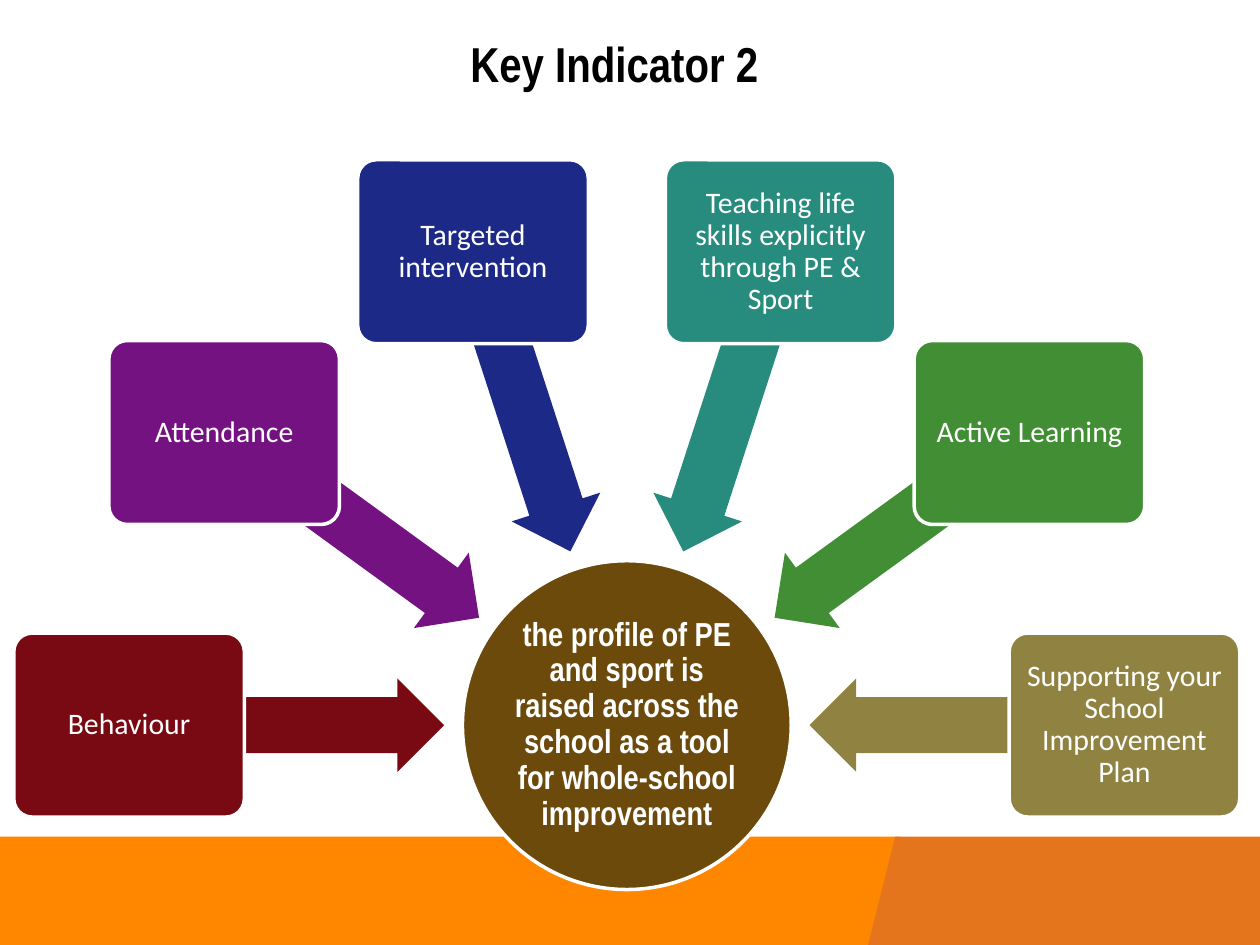
from math import cos, radians, sin

from pptx import Presentation
from pptx.dml.color import RGBColor
from pptx.enum.shapes import MSO_SHAPE
from pptx.enum.text import MSO_ANCHOR, PP_ALIGN
from pptx.util import Inches, Pt

BAND = MSO_SHAPE.PARALLELOGRAM
OVAL = MSO_SHAPE.OVAL
CARD = MSO_SHAPE.ROUNDED_RECTANGLE
ARROW = MSO_SHAPE.LEFT_ARROW
MIDDLE = MSO_ANCHOR.MIDDLE
CENTER = PP_ALIGN.CENTER

# Content
TITLE = "Key Indicator 2"
GOAL = ("the profile of PE and sport is raised across the school "
        "as a tool for whole-school improvement")
FACTORS = [
    ("Behaviour", "790A14"),
    ("Attendance", "751281"),
    ("Targeted intervention", "1C2987"),
    ("Teaching life skills explicitly through PE & Sport", "278B7E"),
    ("Active Learning", "418E34"),
    ("Supporting your School Improvement Plan", "908342"),
]
BANDS = [(-0.25, 7.39, "FF8700"), (6.88, 3.39, "E4751D")]


class Theme:
    head = ("Arial Narrow", 28, True, "000000")
    hub = ("Arial Narrow", 19, True, "FFFFFF")
    card = ("Calibri", 17, False, "FFFFFF")
    goal = "6B4A0B"
    edge = "FFFFFF"


# Layout in inches
HUB_X, HUB_Y, HUB_D = 4.975, 5.755, 2.61
CARD_W, CARD_H, CARD_R = 1.83, 1.46, 3.95
ARROW_W, ARROW_H, ARROW_R = 2.5, 0.74, 2.7
BAND_Y, BAND_H = 6.64, 0.9


def rgb(code):
    return RGBColor.from_string(code)


def draw(slide, kind, x, y, w, h, fill, edge=None):
    """Add a filled shape centred on x, y."""
    shape = slide.shapes.add_shape(
        kind, Inches(x - w / 2), Inches(y - h / 2), Inches(w), Inches(h))
    shape.shadow.inherit = False
    shape.fill.solid()
    shape.fill.fore_color.rgb = rgb(fill)
    if edge:
        shape.line.color.rgb = rgb(edge)
        shape.line.width = Pt(2)
    else:
        shape.line.fill.background()
    return shape


def write(shape, text, style):
    face, size, bold, color = style
    frame = shape.text_frame
    frame.text = text
    frame.word_wrap = True
    para = frame.paragraphs[0]
    para.alignment = CENTER
    font = para.runs[0].font
    font.name, font.size, font.bold = face, Pt(size), bold
    font.color.rgb = rgb(color)


def label(shape, text, style, inset):
    write(shape, text, style)
    frame = shape.text_frame
    frame.vertical_anchor = MIDDLE
    frame.margin_left = frame.margin_right = Inches(inset)
    frame.margin_top = frame.margin_bottom = Inches(inset)
    frame.paragraphs[0].line_spacing = 0.9


def main():
    prs = Presentation()
    prs.slide_width, prs.slide_height = Inches(10), Inches(7.5)
    slide = prs.slides.add_slide(prs.slide_layouts[6])

    # Footer bands
    for left, width, color in BANDS:
        draw(slide, BAND, left + width / 2, BAND_Y + BAND_H / 2,
             width, BAND_H, color)

    # Title
    head = slide.shapes.add_textbox(
        Inches(1.36), Inches(0.22), Inches(7.03), Inches(0.57))
    write(head, TITLE, Theme.head)

    # Central goal
    hub = draw(slide, OVAL, HUB_X, HUB_Y, HUB_D, HUB_D, Theme.goal, Theme.edge)
    label(hub, GOAL, Theme.hub, 0.01)

    # Factors fan over the goal in a half circle, each arrow pointing inward
    step = 180 / (len(FACTORS) - 1)
    for i, (text, color) in enumerate(FACTORS):
        turn = 180 + i * step
        dx, dy = cos(radians(turn)), sin(radians(turn))
        arrow = draw(slide, ARROW, HUB_X + ARROW_R * dx, HUB_Y + ARROW_R * dy,
                     ARROW_W, ARROW_H, color)
        arrow.adjustments[0] = 0.6
        arrow.adjustments[1] = 0.5
        arrow.rotation = turn % 360
        card = draw(slide, CARD, HUB_X + CARD_R * dx, HUB_Y + CARD_R * dy,
                    CARD_W, CARD_H, color, Theme.edge)
        card.adjustments[0] = 0.1
        label(card, text, Theme.card, 0.04)

    prs.save("out.pptx")


if __name__ == "__main__":
    main()
